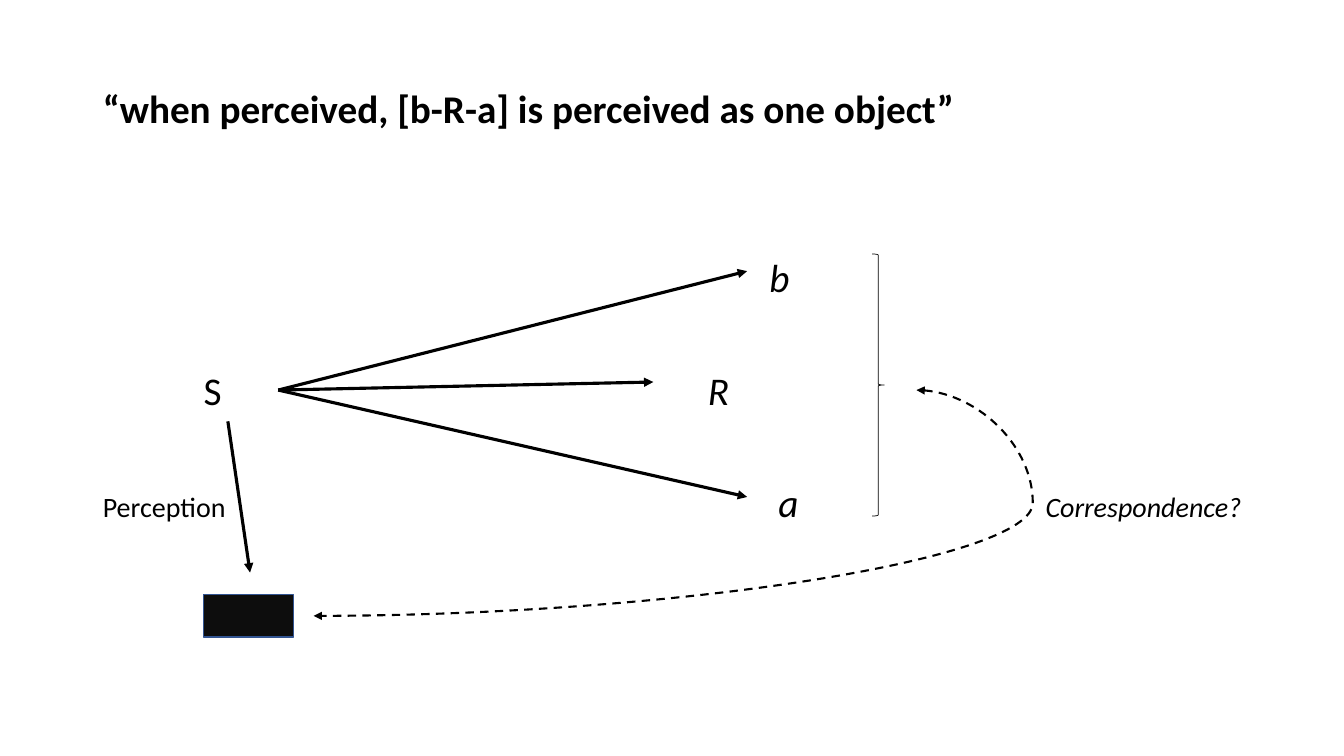
from lxml.etree import SubElement
from pptx import Presentation
from pptx.dml.color import RGBColor
from pptx.enum.dml import MSO_LINE
from pptx.enum.shapes import MSO_CONNECTOR, MSO_SHAPE
from pptx.enum.text import MSO_ANCHOR
from pptx.oxml.ns import qn
from pptx.util import Inches, Pt

THEME = {
    "font": "Calibri",
    "ink": RGBColor(0x00, 0x00, 0x00),
    "box_fill": RGBColor(0x0D, 0x0D, 0x0D),
    "box_line": RGBColor(0x32, 0x54, 0x91),
    "large": Pt(28),
    "small": Pt(20),
}


def add_label(text, left, middle, width, size, bold=False, italic=False):
    height = 0.5
    label = slide.shapes.add_textbox(
        Inches(left), Inches(middle - height / 2), Inches(width), Inches(height)
    )
    frame = label.text_frame
    frame.word_wrap = True
    frame.vertical_anchor = MSO_ANCHOR.MIDDLE
    frame.margin_left = frame.margin_right = 0
    frame.margin_top = frame.margin_bottom = 0
    paragraph = frame.paragraphs[0]
    paragraph.text = text
    paragraph.font.name = THEME["font"]
    paragraph.font.size = size
    paragraph.font.bold = bold
    paragraph.font.italic = italic
    paragraph.font.color.rgb = THEME["ink"]


def add_arrow(kind, start, end, width, ends):
    arrow = slide.shapes.add_connector(
        kind, Inches(start[0]), Inches(start[1]), Inches(end[0]), Inches(end[1])
    )
    arrow.line.color.rgb = THEME["ink"]
    arrow.line.width = Pt(width)
    properties = arrow._element.spPr
    SubElement(properties, qn("a:effectLst"))
    for arrowhead in ends:
        SubElement(properties.find(qn("a:ln")), qn(arrowhead), type="triangle")
    return arrow


presentation = Presentation()
presentation.slide_width = Inches(13.33)
presentation.slide_height = Inches(7.5)
slide = presentation.slides.add_slide(presentation.slide_layouts[6])

add_label("“when perceived, [b-R-a] is perceived as one object”",
          1.02, 1.07, 11.6, THEME["large"], bold=True)

for text, left, middle, italic in [
    ("b", 7.63, 2.75, True),
    ("S", 2.02, 3.87, False),
    ("R", 7.02, 3.87, True),
    ("a", 7.72, 4.98, True),
]:
    add_label(text, left, middle, 0.5, THEME["large"], italic=italic)

add_label("Perception", 1.02, 5.02, 1.3, THEME["small"])
add_label("Correspondence?", 10.37, 5.02, 2.3, THEME["small"], italic=True)

subject = (2.76, 3.87)
for start, end in [
    (subject, (7.41, 2.69)),
    (subject, (6.48, 3.79)),
    (subject, (7.41, 4.93)),
    ((2.26, 4.18), (2.48, 5.68)),
]:
    add_arrow(MSO_CONNECTOR.STRAIGHT, start, end, 2.25, ["a:tailEnd"])

brace = slide.shapes.add_shape(
    MSO_SHAPE.RIGHT_BRACE, Inches(8.65), Inches(2.52), Inches(0.12), Inches(2.6)
)
brace.shadow.inherit = False
brace.fill.background()
brace.line.color.rgb = THEME["ink"]
brace.line.width = Pt(0.5)

correspondence = add_arrow(
    MSO_CONNECTOR.CURVE, (9.09, 3.87), (3.11, 6.11), 1.5, ["a:headEnd", "a:tailEnd"]
)
correspondence.line.dash_style = MSO_LINE.DASH
geometry = correspondence._element.spPr.find(qn("a:prstGeom"))
adjustments = geometry.find(qn("a:avLst"))
if adjustments is None:
    adjustments = SubElement(geometry, qn("a:avLst"))
SubElement(adjustments, qn("a:gd"), name="adj1", fmla="val -19300")

percept = slide.shapes.add_shape(
    MSO_SHAPE.RECTANGLE, Inches(2.02), Inches(5.9), Inches(0.89), Inches(0.42)
)
percept.shadow.inherit = False
percept.fill.solid()
percept.fill.fore_color.rgb = THEME["box_fill"]
percept.line.color.rgb = THEME["box_line"]
percept.line.width = Pt(1)

presentation.save("out.pptx")
